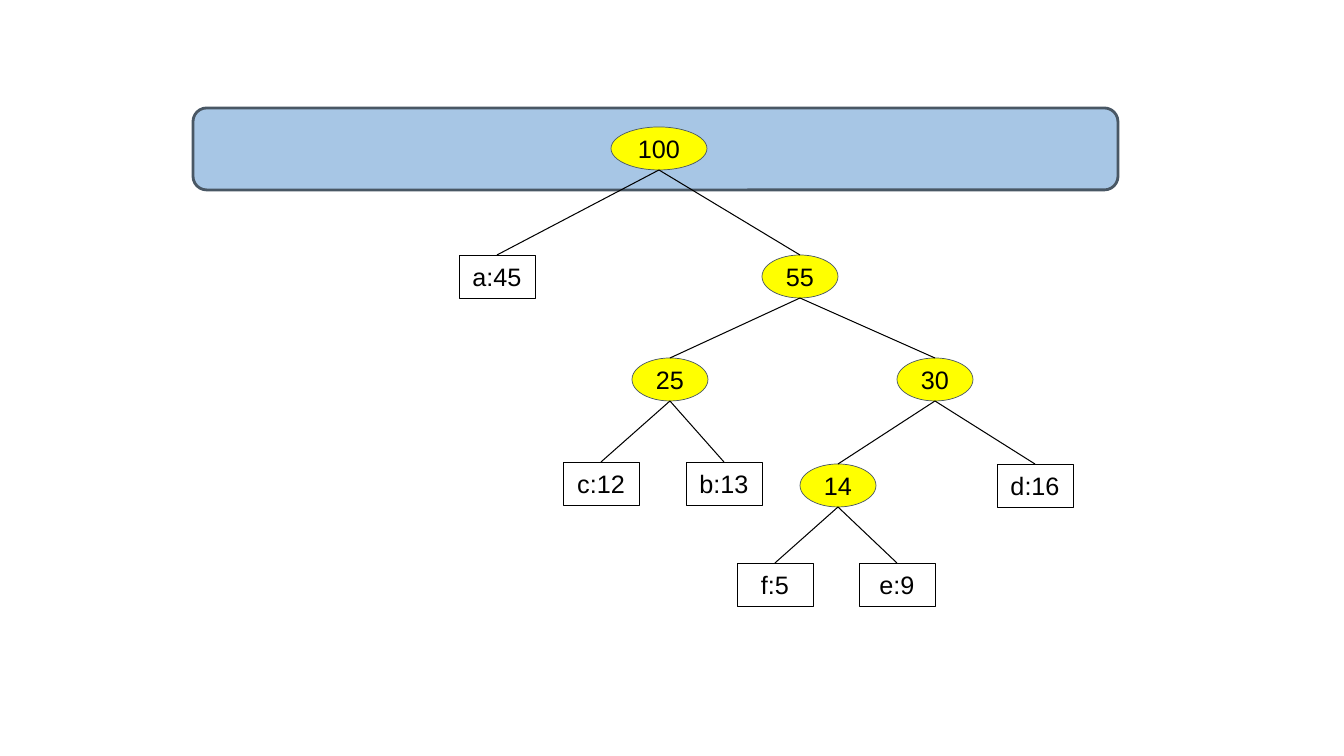
"""Build a slide showing a Huffman code tree with its root level highlighted."""
import pptx
import pptx.dml.color
import pptx.enum.shapes
import pptx.enum.text
import pptx.oxml
import pptx.oxml.ns
import pptx.util

SLIDE_SIZE = (1344, 756)
ROOT_BAND = (193, 108, 925, 82)
NODE_WIDTH, ROOT_WIDTH, NODE_HEIGHT = 76, 96, 43

# label, parent label, centre x, top
TREE = [
    ("100", None, 659, 127),
    ("a:45", "100", 497, 255),
    ("55", "100", 800, 255),
    ("25", "55", 670, 358),
    ("30", "55", 935, 358),
    ("c:12", "25", 601, 462),
    ("b:13", "25", 724, 462),
    ("14", "30", 838, 464),
    ("d:16", "30", 1035, 464),
    ("f:5", "14", 775, 563),
    ("e:9", "14", 897, 563),
]

BLACK = pptx.dml.color.RGBColor(0x00, 0x00, 0x00)
WHITE = pptx.dml.color.RGBColor(0xFF, 0xFF, 0xFF)
YELLOW = pptx.dml.color.RGBColor(0xFF, 0xFF, 0x00)
SLATE = pptx.dml.color.RGBColor(0x49, 0x57, 0x64)
BAND_BLUE = pptx.dml.color.RGBColor(0xA7, 0xC6, 0xE5)
SHAPES = pptx.enum.shapes.MSO_SHAPE


def px(length):
    return round(length * 914400 / 100.8)


def add_box(slide, text, *, kind, place, fill, line, line_width):
    box = slide.shapes.add_shape(kind, *map(px, place))
    box.shadow.inherit = False
    box.fill.solid()
    box.fill.fore_color.rgb = fill
    box.line.color.rgb = line
    box.line.width = pptx.util.Pt(line_width)
    if text:
        frame = box.text_frame
        frame.word_wrap = False
        frame.margin_left = frame.margin_right = 0
        frame.vertical_anchor = pptx.enum.text.MSO_ANCHOR.MIDDLE
        para = frame.paragraphs[0]
        para.alignment = pptx.enum.text.PP_ALIGN.CENTER
        span = para.add_run()
        span.text = text
        span.font.name = "Arial"
        span.font.size = pptx.util.Pt(18)
        span.font.color.rgb = BLACK


def add_edge(slide, start, end):
    edge = slide.shapes.add_connector(
        pptx.enum.shapes.MSO_CONNECTOR.STRAIGHT, *map(px, start + end))
    edge.line.color.rgb = BLACK
    edge.line.width = pptx.util.Pt(0.75)
    properties = edge._element.spPr
    properties.append(pptx.oxml.parse_xml(
        f'<a:effectLst {pptx.oxml.ns.nsdecls("a")}/>'))


def main():
    deck = pptx.Presentation()
    deck.slide_width, deck.slide_height = map(px, SLIDE_SIZE)
    page = deck.slides.add_slide(deck.slide_layouts[6])
    add_box(page, "", kind=SHAPES.ROUNDED_RECTANGLE, place=ROOT_BAND,
            fill=BAND_BLUE, line=SLATE, line_width=2)

    bottoms = {label: (x, top + NODE_HEIGHT) for label, _, x, top in TREE}
    for label, parent, x, top in TREE:
        is_leaf = ":" in label
        width = NODE_WIDTH if parent else ROOT_WIDTH
        add_box(page, label,
                kind=SHAPES.RECTANGLE if is_leaf else SHAPES.OVAL,
                place=(x - width / 2, top, width, NODE_HEIGHT),
                fill=WHITE if is_leaf else YELLOW,
                line=BLACK if is_leaf else SLATE, line_width=0.5)
        if parent:
            add_edge(page, (x, top), bottoms[parent])
    deck.save("out.pptx")


if __name__ == "__main__":
    main()
